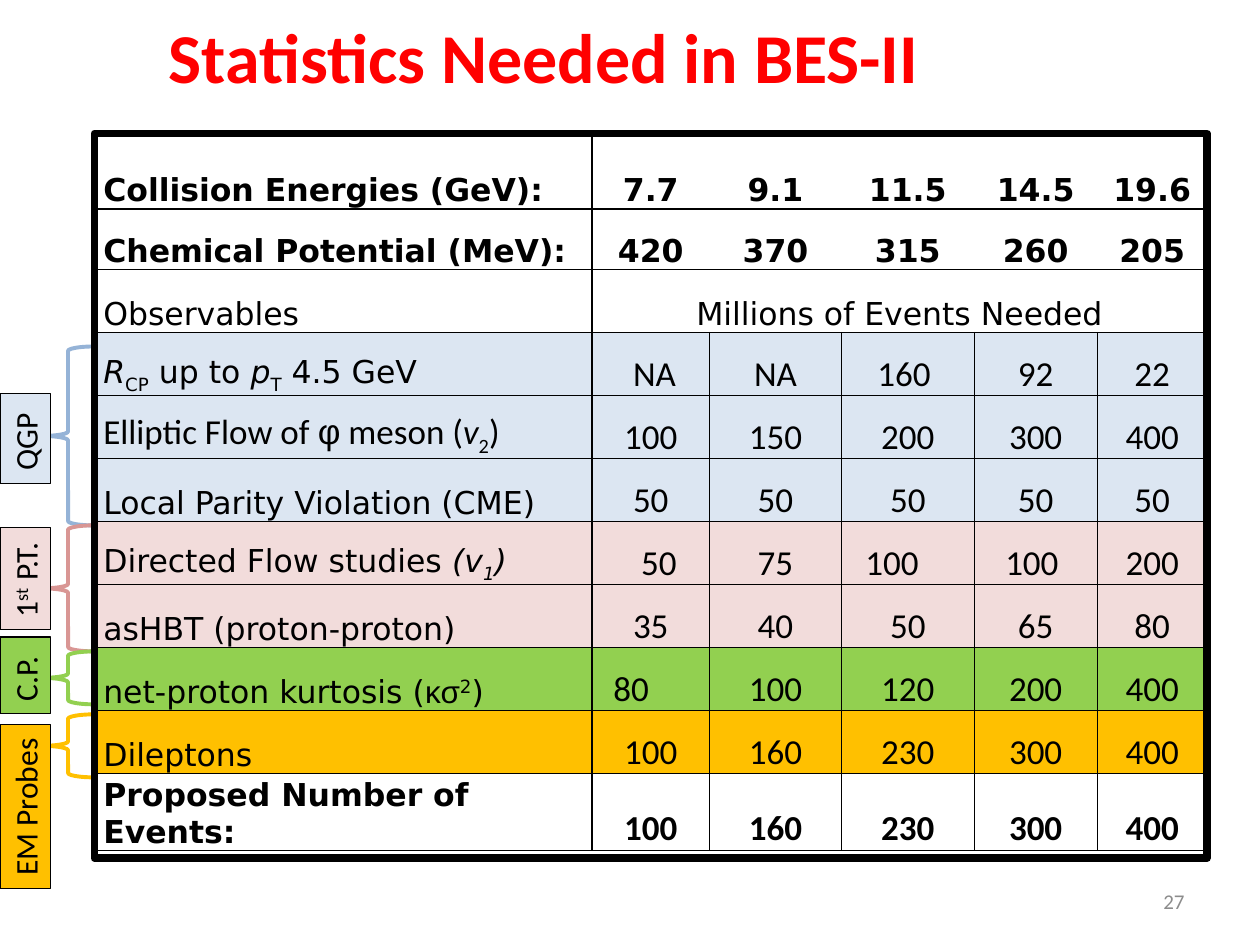
from lxml.etree import SubElement
from pptx import Presentation
from pptx.dml.color import RGBColor
from pptx.enum.shapes import MSO_SHAPE as Shape
from pptx.enum.text import MSO_ANCHOR as Anchor, PP_ALIGN as Align
from pptx.oxml import parse_xml
from pptx.oxml.ns import nsdecls, qn
from pptx.util import Inches, Pt

THEME = {
    "black": "000000", "white": "FFFFFF", "title": "FF0000", "number": "8C8C8C",
    "blue": "DCE6F2", "blue line": "95B3D7", "pink": "F2DCDB", "pink line": "D99694",
    "green": "92D050", "gold": "FFC000",
    "head font": "DejaVu Sans", "body font": "Calibri", "greek font": "Arial",
    "title size": 40, "value size": 20, "label size": 18, "number size": 12,
}
ITALIC = {"italic": True}
SUB = {"baseline": -25}
SUPER = {"baseline": 30}
GREEK = {"font": THEME["greek font"]}
BODY = {"font": THEME["body font"], "size": THEME["value size"]}

# Content: label, values, fill, format of the label
TITLE = "Statistics Needed in BES-II"
PAGE_NUMBER = "27"
BOLD = {"bold": True}
ROWS = [
    ("Collision Energies (GeV):", ["7.7", "9.1", "11.5", "14.5", "19.6"], "white", BOLD),
    ("Chemical Potential (MeV):", ["420", "370", "315", "260", "205"], "white", BOLD),
    ("Observables", ["Millions of Events Needed"], "white", {}),
    ([("R", ITALIC), ("CP", SUB), (" up to ", {}), ("p", ITALIC), ("T", SUB), (" 4.5 GeV", {})],
     ["NA", "NA", "160", "92", "22"], "blue", {}),
    ([("Elliptic Flow of ", {}), ("φ", GREEK), (" meson (", {}), ("v", ITALIC), ("2", SUB), (")", {})],
     ["100", "150", "200", "300", "400"], "blue", BODY),
    ("Local Parity Violation (CME)", ["50"] * 5, "blue", {}),
    ([("Directed Flow studies ", {}), ("(v", ITALIC), ("1", ITALIC | SUB), (")", ITALIC)],
     ["50", "75", "100", "100", "200"], "pink", {}),
    ("asHBT (proton-proton)", ["35", "40", "50", "65", "80"], "pink", {}),
    ([("net-proton kurtosis (", {}), ("κσ", GREEK), ("2", SUPER), (")", {})],
     ["80", "100", "120", "200", "400"], "green", {}),
    ("Dileptons", ["100", "160", "230", "300", "400"], "gold", {}),
    ("Proposed Number of Events:", ["100", "160", "230", "300", "400"], None, BOLD),
]
HEADER_ROWS = 3
# Off-centre values: (row, column) -> sideways inset in inches
NUDGES = {(3, 1): 0.06, (3, 3): -0.06, (6, 1): 0.13, (6, 3): -0.25, (6, 4): -0.06, (8, 1): -0.31}

# Groups: text, label length, label centre, brace top, brace height, fill, line
GROUPS = [
    ("QGP", 0.71, 3.48, 2.75, 1.42, "blue", "blue line"),
    ([("1", {}), ("st", SUPER), (" P.T.", {})], 0.81, 4.59, 4.17, 1, "pink", "pink line"),
    ("C.P.", 0.61, 5.36, 5.17, 0.42, "green", "green"),
    ("EM Probes", 1.3, 6.4, 5.67, 0.5, "gold", "gold"),
]

# Layout in inches
COLUMNS = [3.95, 0.93, 1.05, 1.05, 0.98, 0.87]
HEIGHTS = [0.58, 0.48] + [0.5] * 8 + [0.61]
TABLE_LEFT, TABLE_TOP, TABLE_WIDTH = 0.75, 1.08, 8.83
BRACE_WIDTH, LABEL_HEIGHT, CELL_INSET = 0.42, 0.4, 0.07


def colour(name):
    return RGBColor.from_string(THEME[name])


def write(frame, text, size=THEME["label size"], font=THEME["body font"], ink="black",
          bold=False, align=Align.LEFT):
    """Write a string, or a list of (text, format) runs, as one paragraph."""
    paragraph = frame.paragraphs[0]
    paragraph.alignment = align
    for words, style in [(text, {})] if isinstance(text, str) else text:
        run = paragraph.add_run()
        run.text = words
        run.font.size, run.font.bold = Pt(size), bold
        run.font.name = style.get("font", font)
        run.font.italic = style.get("italic", False)
        run.font.color.rgb = colour(ink)
        if "baseline" in style:
            run.font._element.set("baseline", str(style["baseline"] * 1000))


def add_box(slide, preset, left, top, width, height, fill=None, line="black", weight=0.75):
    shape = slide.shapes.add_shape(preset, *map(Inches, (left, top, width, height)))
    shape.shadow.inherit = False
    if fill:
        shape.fill.solid()
        shape.fill.fore_color.rgb = colour(fill)
    else:
        shape.fill.background()
    shape.line.color.rgb = colour(line)
    shape.line.width = Pt(weight)
    return shape


def add_text(slide, text, left, top, width, height, wrap=True, anchor=Anchor.TOP, **style):
    frame = slide.shapes.add_textbox(*map(Inches, (left, top, width, height))).text_frame
    frame.word_wrap, frame.vertical_anchor = wrap, anchor
    write(frame, text, **style)


def set_borders(cell, weights):
    """Weights in points for left, right, top, bottom; 0 hides the edge."""
    properties = cell._tc.get_or_add_tcPr()
    for index, (side, weight) in enumerate(zip("LRTB", weights)):
        edge = parse_xml(f'<a:ln{side} {nsdecls("a")} w="{Pt(weight)}"/>')
        if weight:
            paint = SubElement(edge, qn("a:solidFill"))
            SubElement(paint, qn("a:srgbClr")).set("val", THEME["black"])
        else:
            SubElement(edge, qn("a:noFill"))
        properties.insert(index, edge)


def add_statistics(slide):
    graphic = slide.shapes.add_table(
        len(ROWS), len(COLUMNS),
        *map(Inches, (TABLE_LEFT, TABLE_TOP, TABLE_WIDTH, sum(HEIGHTS))))
    table = graphic.table
    table.first_row = table.horz_banding = False
    for column, width in zip(table.columns, COLUMNS):
        column.width = Inches(width)
    for row, height in zip(table.rows, HEIGHTS):
        row.height = Inches(height)

    for r, (label, values, fill, label_style) in enumerate(ROWS):
        header = r < HEADER_ROWS
        value_style = {"font": THEME["head font"]} if header else BODY
        value_style = value_style | {"bold": label_style.get("bold", False), "align": Align.CENTER}
        texts = [label] + values
        for c in range(len(COLUMNS)):
            cell = table.cell(r, c)
            nudge = NUDGES.get((r, c), 0)
            cell.margin_left = Inches(CELL_INSET + max(nudge, 0))
            cell.margin_right = Inches(CELL_INSET + max(-nudge, 0))
            cell.margin_top = cell.margin_bottom = 0
            cell.vertical_anchor = Anchor.BOTTOM
            if fill:
                cell.fill.solid()
                cell.fill.fore_color.rgb = colour(fill)
            else:
                cell.fill.background()
            inner = 0 if header else 0.5
            across = 1 if header or c == 0 else 0.5
            set_borders(cell, (1 if c < 2 else inner, 1 if c == 0 else inner,
                               1 if r == HEADER_ROWS else across, across))
            if c < len(texts):
                style = value_style if c else {"font": THEME["head font"]} | label_style
                write(cell.text_frame, texts[c], **style)
        if len(values) == 1:
            table.cell(r, 1).merge(table.cell(r, len(COLUMNS) - 1))


def add_groups(slide):
    for text, length, centre, top, height, fill, line in GROUPS:
        add_box(slide, Shape.LEFT_BRACE, TABLE_LEFT - BRACE_WIDTH, top, BRACE_WIDTH, height,
                line=line, weight=2.25)
        label = add_box(slide, Shape.RECTANGLE, (LABEL_HEIGHT - length) / 2,
                        centre - LABEL_HEIGHT / 2, length, LABEL_HEIGHT, fill=fill)
        label.rotation = 270
        label.text_frame.word_wrap = False
        label.text_frame.vertical_anchor = Anchor.TOP
        write(label.text_frame, text)


def main():
    presentation = Presentation()
    presentation.slide_width, presentation.slide_height = Inches(10), Inches(7.5)
    slide = presentation.slides.add_slide(presentation.slide_layouts[6])
    add_statistics(slide)
    add_groups(slide)
    # Heavy frame around the table
    add_box(slide, Shape.RECTANGLE, TABLE_LEFT, 1.06, TABLE_WIDTH, 5.75, weight=4.5)
    # Title and page number
    add_text(slide, TITLE, 1.24, 0.06, 6.18, 0.77, wrap=False,
             size=THEME["title size"], ink="title", bold=True)
    add_text(slide, PAGE_NUMBER, 7.17, 6.95, 2.33, 0.4, anchor=Anchor.MIDDLE,
             size=THEME["number size"], ink="number", align=Align.RIGHT)
    presentation.save("out.pptx")


if __name__ == "__main__":
    main()
